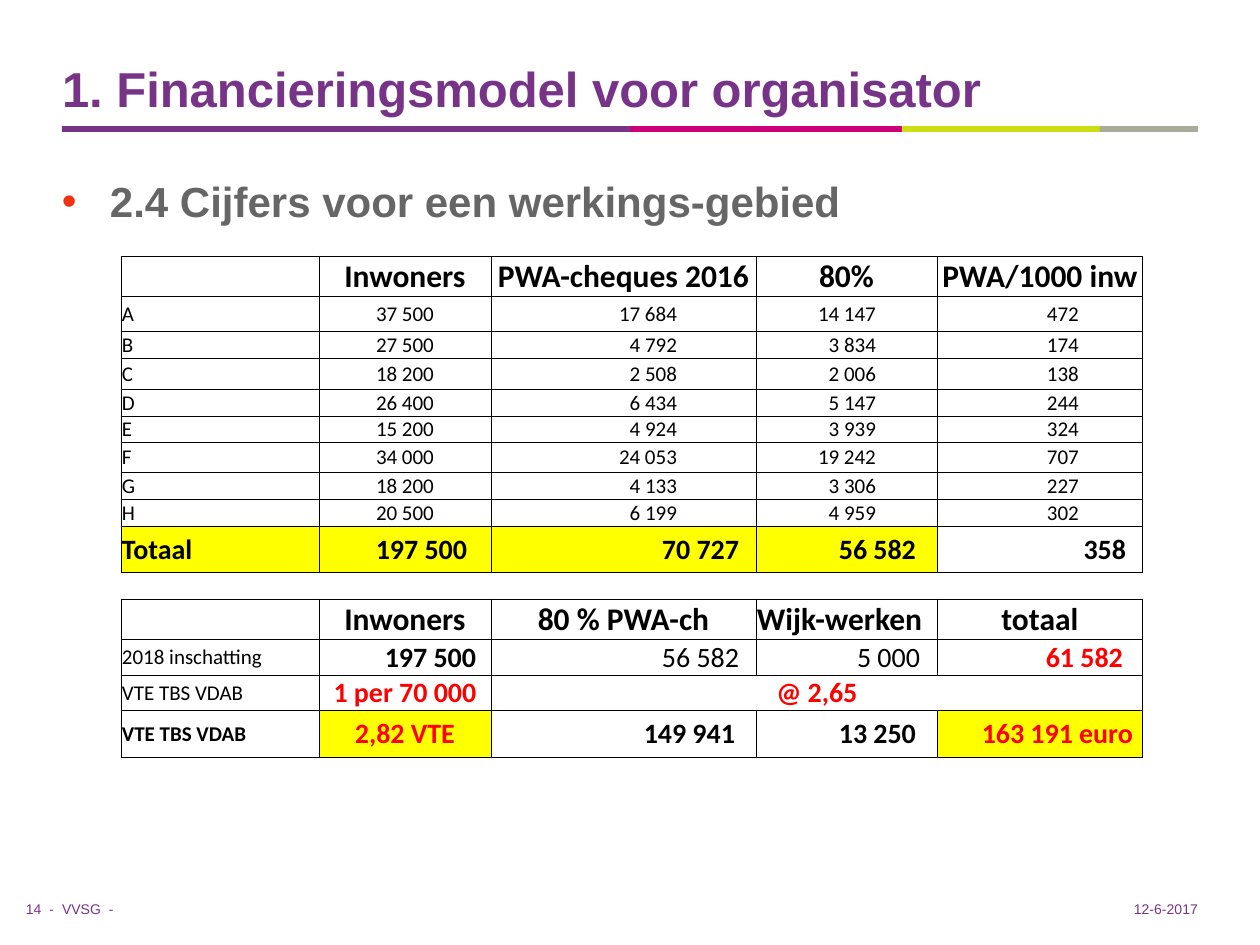
from dataclasses import dataclass
from itertools import product
from typing import Optional

from lxml.etree import SubElement
from pptx import Presentation
from pptx.dml.color import RGBColor
from pptx.enum.shapes import MSO_SHAPE
from pptx.enum.text import MSO_ANCHOR, PP_ALIGN
from pptx.oxml.ns import qn
from pptx.util import Emu, Pt

COLORS = {
    "purple": "773388", "magenta": "CC0077", "lime": "CCDD11", "khaki": "AAAA99",
    "gray": "666666", "bullet": "EE3311", "black": "000000", "red": "FF0000",
    "yellow": "FFFF00",
}
EMU_PER_PX = 914400 / 126
LEFT, CENTER, RIGHT = PP_ALIGN.LEFT, PP_ALIGN.CENTER, PP_ALIGN.RIGHT


@dataclass
class Bar:
    left: int
    width: int
    color: str


@dataclass
class Label:
    text: str
    box: tuple[int, int, int, int]
    size: int
    color: str
    bold: bool = False
    align: PP_ALIGN = LEFT
    anchor: MSO_ANCHOR = MSO_ANCHOR.BOTTOM
    bullet: bool = False


@dataclass
class Entry:
    text: str = ""
    size: int = 12
    bold: bool = False
    color: str = "black"
    align: PP_ALIGN = LEFT
    margin: int = 1
    fill: Optional[str] = None


BARS = [
    Bar(62, 568, "purple"), Bar(630, 272, "magenta"),
    Bar(902, 198, "lime"), Bar(1100, 98, "khaki"),
]
LABELS = [
    Label("1. Financieringsmodel voor organisator", (62, 0, 1013, 117), 28, "purple", True),
    Label("2.4 Cijfers voor een werkings-gebied", (62, 176, 1198, 78), 24, "gray", True,
          anchor=MSO_ANCHOR.TOP, bullet=True),
    Label("14  -", (0, 901, 54, 16), 8, "purple", align=RIGHT),
    Label("VVSG  -", (62, 901, 59, 16), 8, "purple"),
    Label("12-6-2017", (1100, 901, 98, 16), 8, "purple", align=RIGHT),
]
COLUMN_WIDTHS = [198, 172, 265, 181, 206]
ROW_HEIGHTS = [40, 35, 27, 31, 27, 26, 30, 27, 27, 46, 27, 40, 36, 35, 47]
GAP_ROW, MERGED_ROW = 10, 13
AREA_MARGINS = [57, 79, 61, 64]
TOTAL_MARGINS = [24, 17, 21, 17]
AREAS = [
    ("A", "37 500", "17 684", "14 147", "472"),
    ("B", "27 500", "4 792", "3 834", "174"),
    ("C", "18 200", "2 508", "2 006", "138"),
    ("D", "26 400", "6 434", "5 147", "244"),
    ("E", "15 200", "4 924", "3 939", "324"),
    ("F", "34 000", "24 053", "19 242", "707"),
    ("G", "18 200", "4 133", "3 306", "227"),
    ("H", "20 500", "6 199", "4 959", "302"),
]
TOTALS = ("197 500", "70 727", "56 582", "358")


def px(length: int) -> Emu:
    """Turn whole pixels into EMU."""
    return Emu(round(length * EMU_PER_PX))


def rgb(name: str) -> RGBColor:
    """Look up a named colour."""
    return RGBColor.from_string(COLORS[name])


def assign(target, values: dict) -> None:
    """Set each named attribute on the target."""
    for name, value in values.items():
        setattr(target, name, value)


def heading(text: str, align: PP_ALIGN = CENTER) -> Entry:
    """Describe a column heading."""
    return Entry(text, 18, True, align=align)


def number(text: str, margin: int, size: int = 16, bold: bool = True,
           color: str = "black", fill: Optional[str] = None) -> Entry:
    """Describe a right-aligned figure."""
    return Entry(text, size, bold, color, RIGHT, margin, fill)


def table_rows() -> list[list[Entry]]:
    """List the entries of every table row."""
    rows = [[Entry(), *map(heading, ("Inwoners", "PWA-cheques 2016", "80%", "PWA/1000 inw"))]]
    for name, *values in AREAS:
        rows.append([Entry(name)] + [number(value, margin, 12, False)
                                     for value, margin in zip(values, AREA_MARGINS)])
    totals = [number(value, margin) for value, margin in zip(TOTALS, TOTAL_MARGINS)]
    rows.append([Entry("Totaal", 16, True), *totals])
    for entry in rows[-1][:-1]:
        entry.fill = "yellow"
    rows.append([Entry() for _ in COLUMN_WIDTHS])
    rows.append([Entry(), heading("Inwoners"), heading("80 % PWA-ch"),
                 heading("Wijk-werken", LEFT), heading("totaal")])
    rows.append([Entry("2018 inschatting"), number("197 500", 15),
                 number("56 582", 17, bold=False), number("5 000", 17, bold=False),
                 number("61 582", 20, color="red")])
    rows.append([Entry("VTE TBS VDAB"), Entry("1 per 70 000", 16, True, "red", CENTER),
                 Entry("@ 2,65", 16, True, "red", CENTER), Entry(), Entry()])
    rows.append([Entry("VTE TBS VDAB", 12, True),
                 Entry("2,82 VTE", 16, True, "red", CENTER, fill="yellow"),
                 number("149 941", 21), number("13 250", 21),
                 number("163 191 euro", 10, color="red", fill="yellow")])
    return rows


def write(paragraph, item, font_name: str) -> None:
    """Write the text of a label or an entry into a paragraph."""
    paragraph.alignment = item.align
    if not item.text:
        SubElement(paragraph._p, qn("a:endParaRPr"), sz=str(item.size * 100))
        return
    run = paragraph.add_run()
    run.text = item.text
    assign(run.font, {"name": font_name, "size": Pt(item.size), "bold": item.bold})
    run.font.color.rgb = rgb(item.color)


def draw_bar(slide, bar: Bar) -> None:
    """Draw one part of the rule under the title."""
    shape = slide.shapes.add_shape(MSO_SHAPE.RECTANGLE, px(bar.left), px(126), px(bar.width), px(6))
    shape.shadow.inherit = False
    shape.fill.solid()
    shape.fill.fore_color.rgb = rgb(bar.color)
    shape.line.fill.background()


def draw_label(slide, label: Label) -> None:
    """Draw one text box."""
    frame = slide.shapes.add_textbox(*map(px, label.box)).text_frame
    assign(frame, {"word_wrap": True, "vertical_anchor": label.anchor, "margin_left": 0,
                   "margin_right": 0, "margin_top": 0, "margin_bottom": 0})
    paragraph = frame.paragraphs[0]
    if label.bullet:
        properties = paragraph._p.get_or_add_pPr()
        assign_indent = {"marL": px(48), "indent": px(-48)}
        for name, value in assign_indent.items():
            properties.set(name, str(value))
        SubElement(SubElement(properties, qn("a:buClr")), qn("a:srgbClr"), val=COLORS["bullet"])
        SubElement(properties, qn("a:buFont"), typeface="Arial")
        SubElement(properties, qn("a:buChar"), char="•")
    write(paragraph, label, "Arial")


def draw_borders(cell, hidden: str) -> None:
    """Give a cell thin black borders, except on the hidden sides."""
    properties = cell._tc.get_or_add_tcPr()
    for side in "LRTB":
        line = SubElement(properties, qn(f"a:ln{side}"), w=str(Pt(0.5)))
        if side in hidden:
            SubElement(line, qn("a:noFill"))
        else:
            SubElement(SubElement(line, qn("a:solidFill")), qn("a:srgbClr"), val=COLORS["black"])


def draw_table(slide, rows: list[list[Entry]]) -> None:
    """Draw the table with both blocks of figures."""
    table = slide.shapes.add_table(len(rows), len(COLUMN_WIDTHS), px(121), px(256),
                                   px(sum(COLUMN_WIDTHS)), px(sum(ROW_HEIGHTS))).table
    assign(table, {"first_row": False, "horz_banding": False})
    for column, width in zip(table.columns, COLUMN_WIDTHS):
        column.width = px(width)
    for row, height in zip(table.rows, ROW_HEIGHTS):
        row.height = px(height)
    for row, column in product(range(len(rows)), range(len(COLUMN_WIDTHS))):
        cell, entry = table.cell(row, column), rows[row][column]
        assign(cell, {"margin_left": px(1), "margin_right": px(entry.margin), "margin_top": px(1),
                      "margin_bottom": 0, "vertical_anchor": MSO_ANCHOR.MIDDLE})
        draw_borders(cell, "LR" if row == GAP_ROW else "")
        if entry.fill:
            cell.fill.solid()
            cell.fill.fore_color.rgb = rgb(entry.fill)
        else:
            cell.fill.background()
        write(cell.text_frame.paragraphs[0], entry, "Calibri")
    table.cell(MERGED_ROW, 2).merge(table.cell(MERGED_ROW, 4))


def main() -> None:
    """Build and save the slide."""
    presentation = Presentation()
    assign(presentation, {"slide_width": px(1260), "slide_height": px(945)})
    slide = presentation.slides.add_slide(presentation.slide_layouts[6])
    for bar in BARS:
        draw_bar(slide, bar)
    for label in LABELS:
        draw_label(slide, label)
    draw_table(slide, table_rows())
    presentation.save("out.pptx")


if __name__ == "__main__":
    main()
